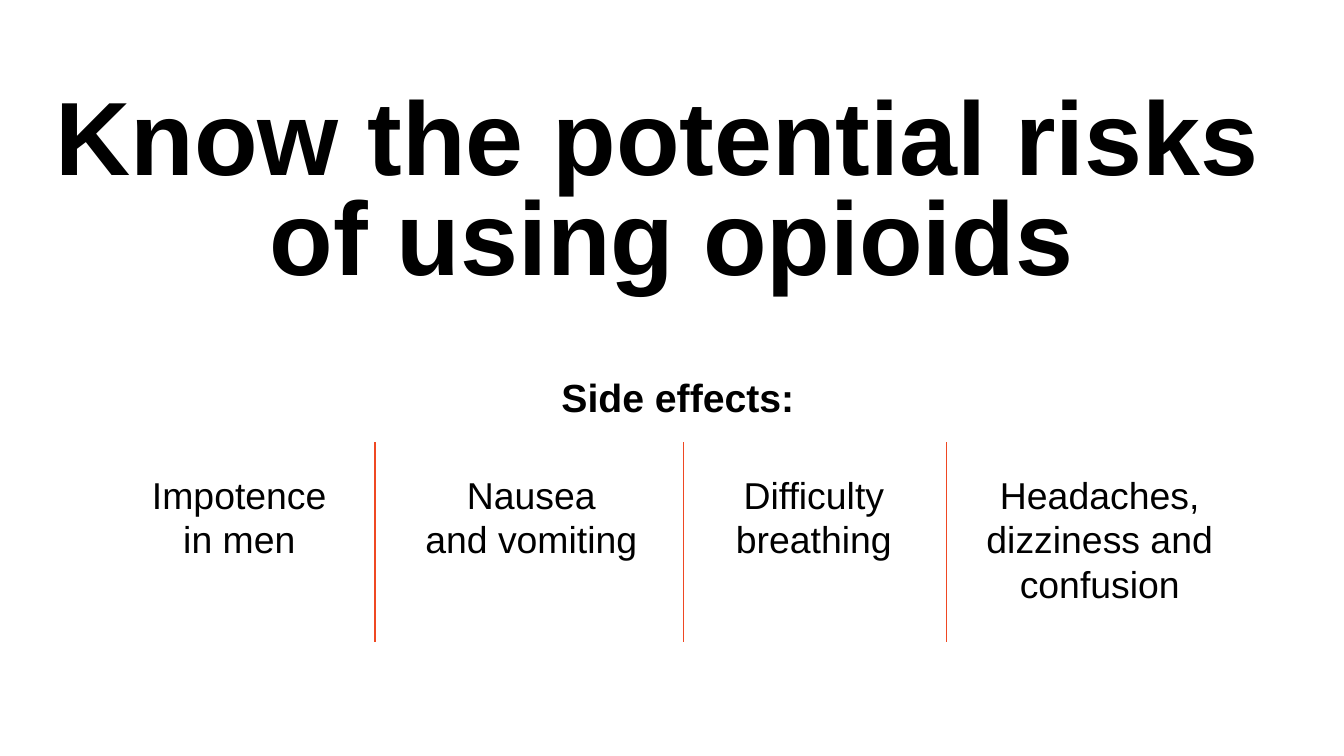
from pptx import Presentation
from pptx.dml.color import RGBColor
from pptx.enum.shapes import MSO_CONNECTOR
from pptx.enum.text import MSO_ANCHOR, PP_ALIGN
from pptx.oxml.ns import qn
from pptx.util import Cm, Pt
from lxml import etree

BLACK = RGBColor(0x00, 0x00, 0x00)
ORANGE = RGBColor(0xEF, 0x48, 0x23)
CENTER = PP_ALIGN.CENTER
TOP = MSO_ANCHOR.TOP
STRAIGHT = MSO_CONNECTOR.STRAIGHT
TITLE_ONLY = 5


def place(shape, left, top, width, height):
    shape.left, shape.top = Cm(left), Cm(top)
    shape.width, shape.height = Cm(width), Cm(height)


def write(shape, lines, size, bold=False):
    frame = shape.text_frame
    frame.word_wrap = True
    frame.vertical_anchor = TOP
    frame.text = "\n".join(lines)
    for paragraph in frame.paragraphs:
        paragraph.alignment = CENTER
        paragraph.font.name = "Arial"
        paragraph.font.size = Pt(size)
        paragraph.font.bold = bold
        paragraph.font.color.rgb = BLACK


prs = Presentation()
prs.slide_width, prs.slide_height = Cm(33.87), Cm(19.05)
slide = prs.slides.add_slide(prs.slide_layouts[TITLE_ONLY])

# Headline
headline = slide.shapes.title
place(headline, 0, 2.29, 33.87, 6.53)
write(headline, ["Know the potential risks \vof using opioids"], 74.4, True)
headline.text_frame.paragraphs[0].line_spacing = 0.8
headline.text_frame.paragraphs[0].space_before = Pt(10)

# Subheading
subheading = slide.shapes.add_textbox(Cm(11.99), Cm(9.27), Cm(10.46), Cm(1.45))
write(subheading, ["Side effects: "], 28, True)

# Side effects in four columns: left, width, lines
side_effects = [
    (3.15, 5.77, ["Impotence", "in men"]),
    (9.98, 6.83, ["Nausea", "and vomiting"]),
    (17.63, 5.77, ["Difficulty", "breathing"]),
    (24.43, 6.58, ["Headaches,", "dizziness and", "confusion"]),
]
for left, width, lines in side_effects:
    effect = slide.shapes.add_textbox(Cm(left), Cm(11.76), Cm(width), Cm(2.49))
    write(effect, lines, 26.7)

# Dividers between the columns
for x in (9.45, 17.22, 23.85):
    divider = slide.shapes.add_connector(STRAIGHT, Cm(x), Cm(11.15), Cm(x), Cm(16.18))
    divider.line.color.rgb = ORANGE
    divider.line.width = Pt(1)
    etree.SubElement(divider._element.spPr, qn("a:effectLst"))

prs.save("out.pptx")
